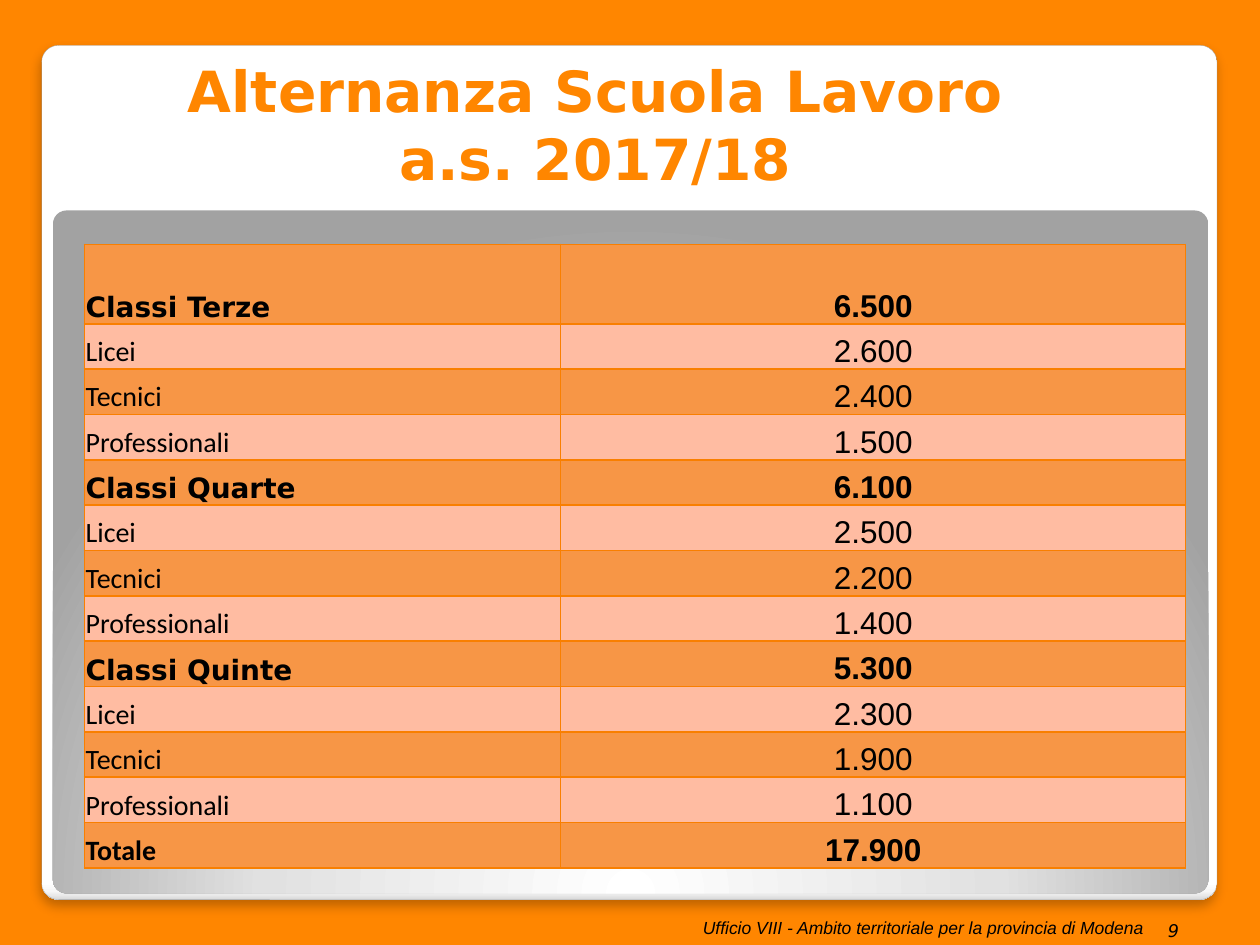
import pptx
import pptx.dml.color
import pptx.enum.shapes
import pptx.enum.text
import pptx.oxml
import pptx.oxml.ns
import pptx.util
from pptx.util import Inches

ALIGN = pptx.enum.text.PP_ALIGN
ANCHOR = pptx.enum.text.MSO_ANCHOR
NAMESPACE = pptx.oxml.ns.nsdecls("a")
ORANGE = "FF8600"
BLACK = "000000"
HEADING_FONT = "DejaVu Sans"
GROUPS = [
    ("Classi Terze", "6.500", ["2.600", "2.400", "1.500"]),
    ("Classi Quarte", "6.100", ["2.500", "2.200", "1.400"]),
    ("Classi Quinte", "5.300", ["2.300", "1.900", "1.100"]),
]
SCHOOLS = ["Licei", "Tecnici", "Professionali"]


def color(hex_string):
    return pptx.dml.color.RGBColor.from_string(hex_string)


def write_text(text_frame, text, size, font=HEADING_FONT, fill=BLACK, bold=False,
               italic=False, align=ALIGN.LEFT, line_spacing=None):
    paragraph = text_frame.paragraphs[0]
    paragraph.text = text
    paragraph.alignment = align
    paragraph.line_spacing = line_spacing
    for run in paragraph.runs:
        run.font.name = font
        run.font.size = pptx.util.Pt(size)
        run.font.bold = bold
        run.font.italic = italic
        run.font.color.rgb = color(fill)


def add_panel(slide, left, top, width, height, stops, direction):
    """Add a rounded panel; direction is the XML that steers its gradient."""
    panel = slide.shapes.add_shape(
        pptx.enum.shapes.MSO_SHAPE.ROUNDED_RECTANGLE,
        Inches(left), Inches(top), Inches(width), Inches(height))
    panel.adjustments[0] = 0.02
    panel.shadow.inherit = False
    panel.line.fill.background()
    stop_xml = "".join(
        f'<a:gs pos="{position * 1000}"><a:srgbClr val="{value}"/></a:gs>'
        for position, value in stops)
    gradient = pptx.oxml.parse_xml(
        f'<a:gradFill {NAMESPACE} rotWithShape="1"><a:gsLst>{stop_xml}</a:gsLst>'
        f'{direction}</a:gradFill>')
    panel._element.spPr.find(pptx.oxml.ns.qn("a:prstGeom")).addnext(gradient)
    return panel


def add_drop_shadow(shape):
    effects = shape._element.spPr.find(pptx.oxml.ns.qn("a:effectLst"))
    effects.append(pptx.oxml.parse_xml(
        f'<a:outerShdw {NAMESPACE} blurRad="76200" dist="50800" dir="5400000" '
        'algn="t" rotWithShape="0"><a:srgbClr val="000000"><a:alpha val="25000"/>'
        '</a:srgbClr></a:outerShdw>'))


def add_panels(slide):
    outer = add_panel(
        slide, 0.33, 0.36, 9.33, 6.78,
        [(0, "FFFFFF"), (98, "FFFFFF"), (99, "F7F7F7"), (100, "DADADA")],
        '<a:lin ang="5400000" scaled="0"/>')
    outer.line.color.rgb = color("A4A4A4")
    outer.line.width = pptx.util.Pt(0.16)
    add_drop_shadow(outer)
    add_panel(
        slide, 0.42, 1.67, 9.17, 5.42,
        [(0, "FFFFFF"), (55, "E1E1E1"), (100, "A2A2A2")],
        '<a:path path="circle">'
        '<a:fillToRect l="50000" t="175000" r="50000" b="-75000"/></a:path>')


def place_title(slide, text):
    title = slide.shapes.title
    title.left, title.top = Inches(0.5), Inches(0.42)
    title.width, title.height = Inches(8.45), Inches(1.15)
    title.text_frame.auto_size = pptx.enum.text.MSO_AUTO_SIZE.NONE
    title.text_frame.vertical_anchor = ANCHOR.BOTTOM
    write_text(title.text_frame, text, 32.4, fill=ORANGE, bold=True, align=ALIGN.CENTER)
    # The panels are drawn after the placeholder, so bring the title to the front.
    slide.shapes._spTree.append(title._element)


def add_label(slide, text, left, top, width, height, **text_format):
    box = slide.shapes.add_textbox(Inches(left), Inches(top), Inches(width), Inches(height))
    box.text_frame.word_wrap = True
    write_text(box.text_frame, text, 10, italic=True, **text_format)


def style_cell(cell, fill):
    cell.vertical_anchor = ANCHOR.BOTTOM
    cell.margin_left = cell.margin_right = cell.margin_top = Inches(0.01)
    cell.margin_bottom = 0
    properties = cell._tc.get_or_add_tcPr()
    for side in ("lnL", "lnR", "lnT", "lnB"):
        properties.append(pptx.oxml.parse_xml(
            f'<a:{side} {NAMESPACE} w="12700"><a:solidFill>'
            f'<a:srgbClr val="F97F00"/></a:solidFill></a:{side}>'))
    cell.fill.solid()
    cell.fill.fore_color.rgb = color(fill)


def table_rows():
    """List label, value, label font and boldness for every row."""
    rows = []
    for group, total, values in GROUPS:
        rows.append((group, total, HEADING_FONT, True))
        rows += [(school, value, "Calibri", False)
                 for school, value in zip(SCHOOLS, values)]
    return rows + [("Totale", "17.900", "Calibri", True)]


def add_students_table(slide):
    rows = table_rows()
    table = slide.shapes.add_table(
        len(rows), 2, Inches(0.67), Inches(1.94), Inches(8.74), Inches(4.95)).table
    table.first_row = table.horz_banding = False
    table.columns[0].width, table.columns[1].width = Inches(3.78), Inches(4.96)
    for index, (label, value, label_font, bold) in enumerate(rows):
        table.rows[index].height = Inches(0.36 if index else 0.63)
        label_cell, value_cell = table.rows[index].cells
        for cell in (label_cell, value_cell):
            style_cell(cell, "FFBCA2" if index % 2 else "F79646")
        spacing = 1.01 if index else None
        write_text(label_cell.text_frame, label, 16, font=label_font, bold=bold,
                   line_spacing=spacing)
        write_text(value_cell.text_frame, value, 18, font="Arial", bold=bold,
                   align=ALIGN.CENTER, line_spacing=spacing)


def main():
    presentation = pptx.Presentation()
    presentation.slide_width, presentation.slide_height = Inches(10), Inches(7.5)
    slide = presentation.slides.add_slide(presentation.slide_layouts[5])
    slide.background.fill.solid()
    slide.background.fill.fore_color.rgb = color(ORANGE)
    add_panels(slide)
    add_label(slide, "Ufficio VIII - Ambito territoriale per la provincia di Modena",
              2, 7.23, 7.17, 0.27, font="Arial", align=ALIGN.RIGHT)
    place_title(slide, "Alternanza Scuola Lavoro\va.s. 2017/18")
    add_students_table(slide)
    add_label(slide, "9", 9.17, 7.25, 0.67, 0.25)
    presentation.save("out.pptx")


if __name__ == "__main__":
    main()
